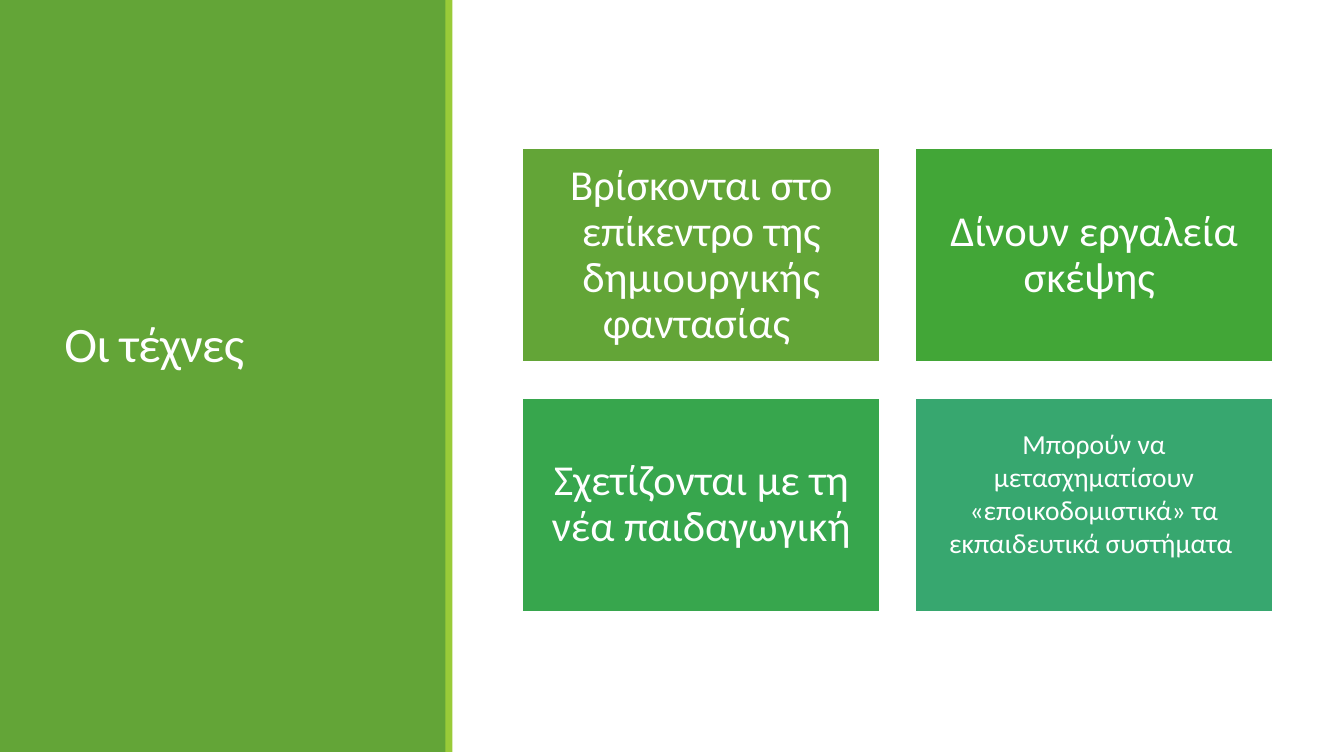
from dataclasses import dataclass

from pptx import Presentation
from pptx import util as u
from pptx.dml.color import RGBColor
from pptx.enum import shapes, text


@dataclass(frozen=True)
class Theme:
    font: str = "Calibri"
    white: str = "FFFFFF"
    panel: str = "63A537"
    stripe: str = "99CB38"
    tiles: tuple = ("63A537", "42A637", "37A64D", "37A76F")
    title_size: int = 36
    tile_size: int = 31
    small_size: int = 20


class Deck:
    def __init__(self, width, height, theme):
        self.theme = theme
        self.prs = Presentation()
        self.prs.slide_width, self.prs.slide_height = u.Cm(width), u.Cm(height)
        self.s = self.prs.slides.add_slide(self.prs.slide_layouts[5])

    def label(self, sp, words, size, align, spacing, insets):
        tf = sp.text_frame
        left, top, right, bottom = map(u.Cm, insets)
        frame = dict(word_wrap=True, auto_size=text.MSO_AUTO_SIZE.NONE,
                     vertical_anchor=text.MSO_ANCHOR.MIDDLE,
                     margin_left=left, margin_top=top,
                     margin_right=right, margin_bottom=bottom)
        for name, value in frame.items():
            setattr(tf, name, value)
        p = tf.paragraphs[0]
        p.alignment, p.line_spacing = align, spacing
        r = p.add_run()
        r.text = words
        for name, value in dict(name=self.theme.font, size=u.Pt(size), bold=False).items():
            setattr(r.font, name, value)
        r.font.color.rgb = RGBColor.from_string(self.theme.white)
        return r

    def rect(self, left, top, width, height, fill, line=None):
        sp = self.s.shapes.add_shape(shapes.MSO_SHAPE.RECTANGLE,
                                     *map(u.Cm, (left, top, width, height)))
        sp.shadow.inherit = False
        sp.fill.solid()
        sp.fill.fore_color.rgb = RGBColor.from_string(fill)
        if line:
            sp.line.color.rgb = RGBColor.from_string(line)
            sp.line.width = u.Pt(1.25)
        else:
            sp.line.fill.background()
        return sp

    def title(self, words, left, top, width, height, insets):
        sp = self.s.shapes.title
        box = dict(left=left, top=top, width=width, height=height)
        for name, value in box.items():
            setattr(sp, name, u.Cm(value))
        r = self.label(sp, words, self.theme.title_size, text.PP_ALIGN.LEFT, 0.85, insets)
        r._r.get_or_add_rPr().set("spc", "-50")
        sp.element.getparent().append(sp.element)

    def tile(self, words, left, top, width, height, fill, size, spacing, insets):
        sp = self.rect(left, top, width, height, fill, self.theme.white)
        self.label(sp, words, size, text.PP_ALIGN.CENTER, spacing, insets)


def main():
    theme = Theme()
    width, height = 34.49, 19.3
    deck = Deck(width, height, theme)
    deck.rect(0, 0, 11.46, height, theme.panel)
    deck.title("Οι τέχνες", 1.4, 1.45, 8.74, 16.26, (0.25, 0.13, 0.25, 1.45))
    deck.rect(11.43, 0, 0.18, height, theme.stripe)

    large = (theme.tile_size, 0.9, (0.33, 0.33, 0.33, 0.33))
    small = (theme.small_size, 1.0, (0.2, 0.2, 0.2, 0.8))
    tiles = (
        ("Βρίσκονται στο επίκεντρο της δημιουργικής φαντασίας ", large),
        ("Δίνουν εργαλεία σκέψης ", large),
        ("Σχετίζονται με τη νέα παιδαγωγική", large),
        ("Μπορούν να μετασχηματίσουν «εποικοδομιστικά» τα εκπαιδευτικά συστήματα ", small),
    )
    tile_w, tile_h, gap = 9.17, 5.49, 0.91
    for i, ((words, style), fill) in enumerate(zip(tiles, theme.tiles)):
        row, col = divmod(i, 2)
        deck.tile(words, 13.41 + col * (tile_w + gap), 3.81 + row * (tile_h + gap),
                  tile_w, tile_h, fill, *style)
    deck.prs.save("out.pptx")


if __name__ == "__main__":
    main()
